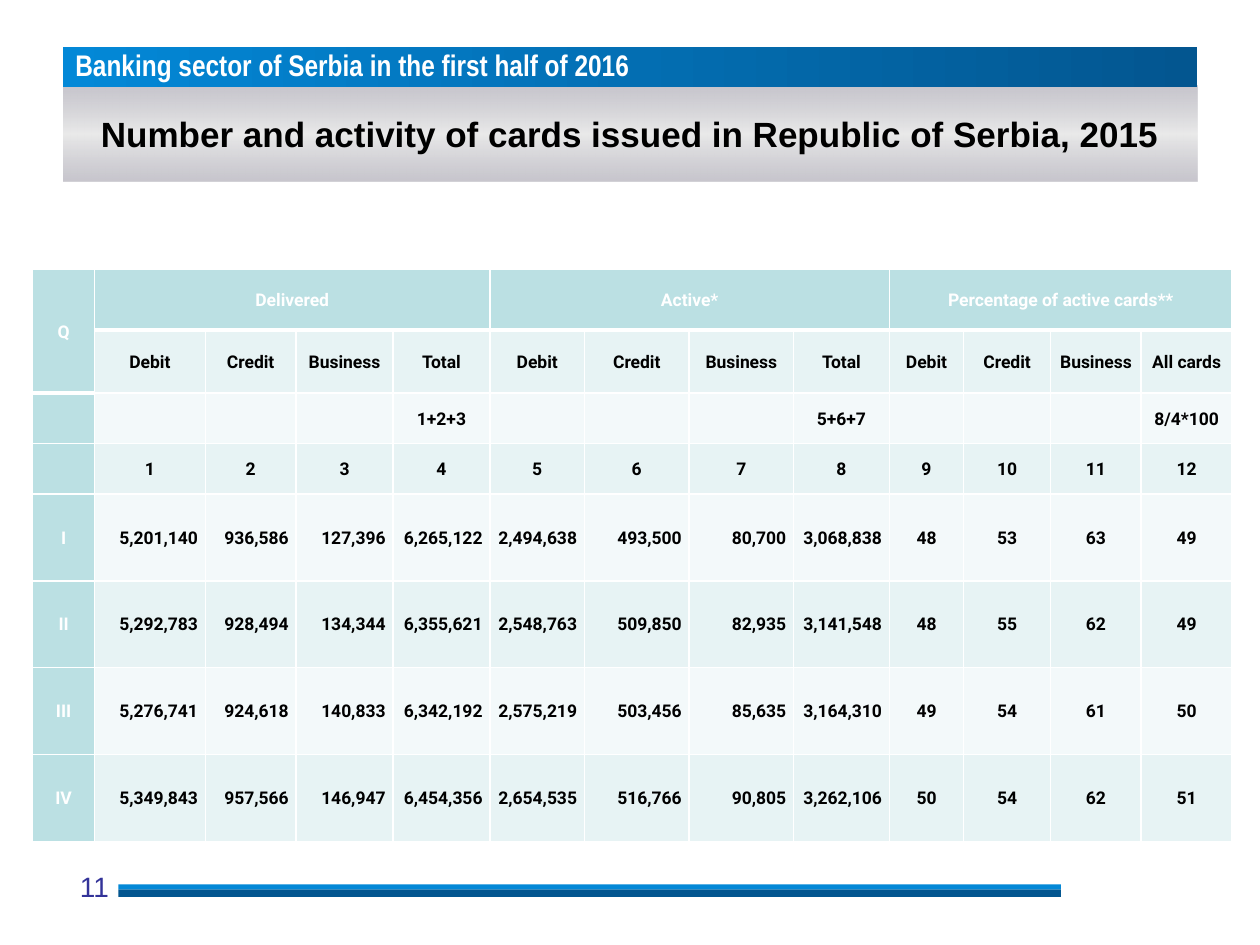
"""Build the slide on cards issued in the Republic of Serbia."""
from lxml import etree
from pptx import Presentation
from pptx.dml.color import RGBColor
from pptx.enum import shapes, text
from pptx.oxml import ns
from pptx.util import Inches, Pt

COLORS = {
    "white": "FFFFFF", "black": "000000", "number": "333399",
    "blue": "0388D7", "navy": "035690", "gray": "B9B7C0", "silver": "EAEAEA",
    "head": "BBE0E3", "band": "E7F3F4", "pale": "F3F9FA",
}
COLUMNS = [.49, .88, .72, .77, .77, .75, .83, .83, .76, .59, .69, .72, .72]
ROWS = [.48, .5, .4, .4] + [.69] * 4
GROUPS = {1: "Delivered", 5: "Active*", 9: "Percentage of active cards**"}
KINDS = ["Debit", "Credit", "Business"]
FORMULAS = {4: "1+2+3", 8: "5+6+7", 12: "8/4*100"}
QUARTERS = [
    "I 5,201,140 936,586 127,396 6,265,122 2,494,638 493,500 80,700 3,068,838 48 53 63 49",
    "II 5,292,783 928,494 134,344 6,355,621 2,548,763 509,850 82,935 3,141,548 48 55 62 49",
    "III 5,276,741 924,618 140,833 6,342,192 2,575,219 503,456 85,635 3,164,310 49 54 61 50",
    "IV 5,349,843 957,566 146,947 6,454,356 2,654,535 516,766 90,805 3,262,106 50 54 62 51",
]


def rgb(name):
    return RGBColor.from_string(COLORS[name])


def place(sp, x, y, w, h):
    sp.left, sp.top, sp.width, sp.height = (Inches(v) for v in (x, y, w, h))


def style(p, size, font, color, bold=False, align=text.PP_ALIGN.CENTER):
    p.alignment = align
    p.font.size, p.font.name, p.font.bold = Pt(size), font, bold
    p.font.color.rgb = rgb(color)


def set_gradient(sp, stops, angle):
    sp.fill.gradient()
    sp.fill.gradient_angle = angle
    gs_list = sp.fill._xPr.find(".//" + ns.qn("a:gsLst"))
    for gs in list(gs_list):
        gs_list.remove(gs)
    for pos, name, alpha in stops:
        gs = etree.SubElement(gs_list, ns.qn("a:gs"), pos=str(pos * 1000))
        clr = etree.SubElement(gs, ns.qn("a:srgbClr"), val=COLORS[name])
        if alpha < 100:
            etree.SubElement(clr, ns.qn("a:alpha"), val=str(alpha * 1000))


def add_bar(s, x, y, w, h, color):
    sp = s.shapes.add_shape(shapes.MSO_SHAPE.RECTANGLE,
                            Inches(x), Inches(y), Inches(w), Inches(h))
    sp.shadow.inherit = False
    sp.line.fill.background()
    sp.fill.solid()
    sp.fill.fore_color.rgb = rgb(color)
    return sp


def add_header(s):
    sp = add_bar(s, .5, .37, 9, .32, "blue")
    set_gradient(sp, [(0, "blue", 100), (100, "navy", 100)], 0)
    tf = sp.text_frame
    tf.margin_top, tf.vertical_anchor = 0, text.MSO_ANCHOR.TOP
    tf.text = "Banking sector of Serbia in the first half of 2016"
    style(tf.paragraphs[0], 17, "Arial Narrow", "white", True, text.PP_ALIGN.LEFT)


def add_title(s):
    sp = s.shapes.title
    place(sp, .5, .68, 9, .76)
    set_gradient(sp, [(0, "gray", 79), (50, "silver", 100), (100, "gray", 79)], 270)
    tf = sp.text_frame
    tf.vertical_anchor = text.MSO_ANCHOR.MIDDLE
    tf.text = "Number and activity of cards issued in Republic of Serbia, 2015"
    style(tf.paragraphs[0], 20, "Arial", "black", True)


def add_page_number(s):
    tf = s.shapes.add_textbox(Inches(.43), Inches(6.85), Inches(.64), Inches(.44)).text_frame
    tf.word_wrap = True
    tf.text = "11"
    style(tf.paragraphs[0], 16, "Arial", "number")


def set_borders(cell, bottom):
    tc_pr = cell._tc.get_or_add_tcPr()
    for i, (side, width) in enumerate(zip("LRTB", (1, 1, 1, bottom))):
        ln = etree.Element(ns.qn("a:ln" + side), w=str(Pt(width)))
        fill = etree.SubElement(ln, ns.qn("a:solidFill"))
        etree.SubElement(fill, ns.qn("a:srgbClr"), val=COLORS["white"])
        tc_pr.insert(i, ln)


def format_cell(cell, row, col, value):
    head = row == 0 or col == 0
    cell.fill.solid()
    cell.fill.fore_color.rgb = rgb("head" if head else "band" if row % 2 else "pale")
    cell.vertical_anchor = text.MSO_ANCHOR.MIDDLE
    cell.margin_left = cell.margin_right = Inches(.06)
    cell.margin_top = cell.margin_bottom = 0
    cell.text = value
    p = cell.text_frame.paragraphs[0]
    p.line_spacing = 1.07
    align = text.PP_ALIGN.RIGHT if row > 3 and 0 < col < 9 else text.PP_ALIGN.CENTER
    style(p, 10, "Roboto", "white" if head else "black", True, align)
    set_borders(cell, 3 if row == 0 or (row, col) == (1, 0) else 1)


def add_card_table(s):
    last = len(COLUMNS)
    grid = [
        ["Q"] + [GROUPS.get(c, "") for c in range(1, last)],
        [""] + (KINDS + ["Total"]) * 2 + KINDS + ["All cards"],
        [FORMULAS.get(c, "") for c in range(last)],
        [""] + [str(c) for c in range(1, last)],
    ] + [line.split() for line in QUARTERS]
    tbl = s.shapes.add_table(len(ROWS), last, Inches(.26), Inches(2.14),
                             Inches(sum(COLUMNS)), Inches(sum(ROWS))).table
    tbl.first_row = tbl.horz_banding = False
    for column, width in zip(tbl.columns, COLUMNS):
        column.width = Inches(width)
    for row, height in zip(tbl.rows, ROWS):
        row.height = Inches(height)
    for r, values in enumerate(grid):
        for c, value in enumerate(values):
            format_cell(tbl.cell(r, c), r, c, value)
    tbl.cell(0, 0).merge(tbl.cell(1, 0))
    for c in GROUPS:
        tbl.cell(0, c).merge(tbl.cell(0, c + 3))


def main():
    prs = Presentation()
    prs.slide_width, prs.slide_height = Inches(10), Inches(7.5)
    s = prs.slides.add_slide(prs.slide_layouts[5])
    add_header(s)
    add_bar(s, .94, 7.06, 7.48, .06, "navy")
    add_bar(s, .94, 7.02, 7.48, .04, "blue")
    add_title(s)
    add_page_number(s)
    add_card_table(s)
    prs.save("out.pptx")


if __name__ == "__main__":
    main()
